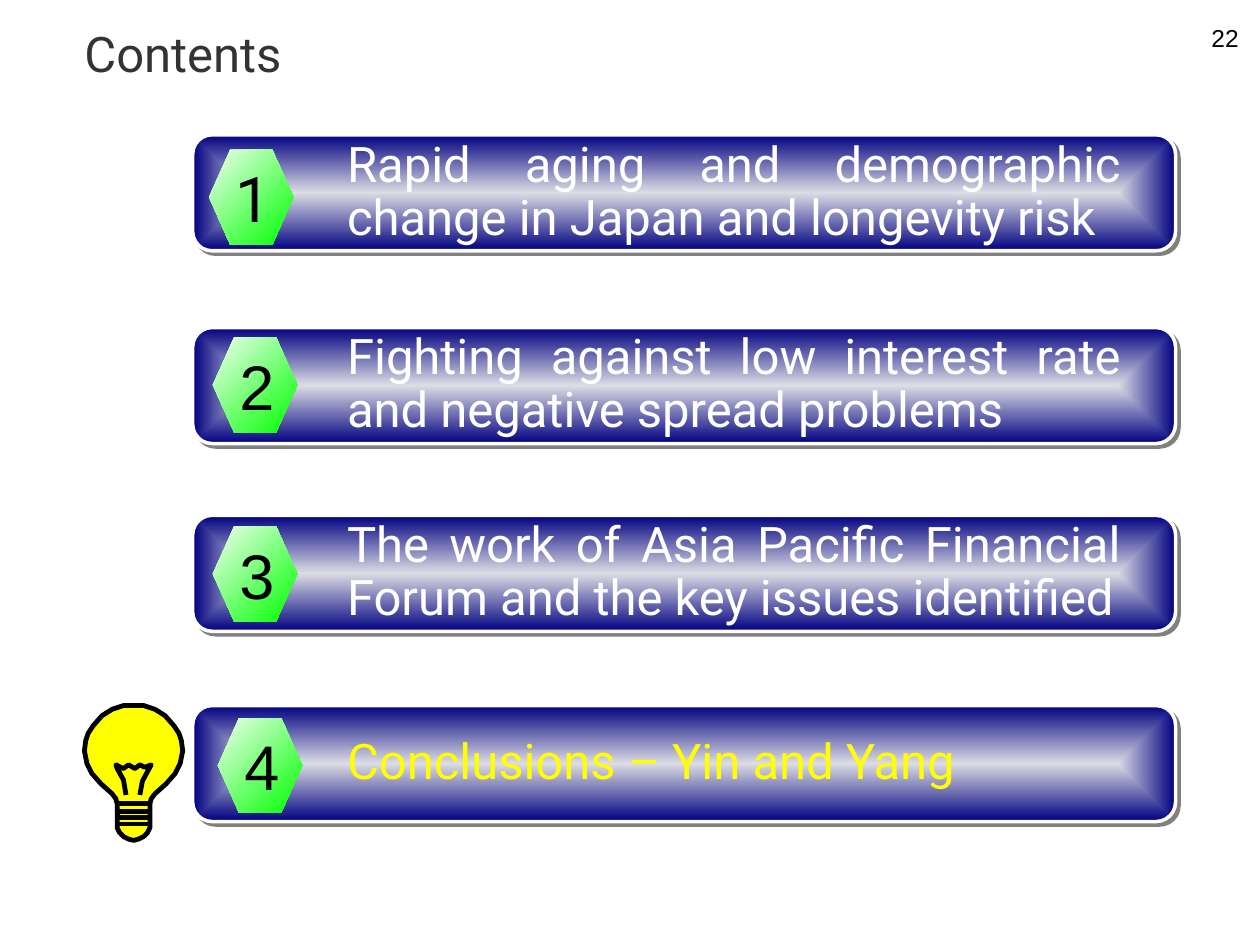
import dataclasses
import pptx
import pptx.dml.color
import pptx.enum.shapes
import pptx.enum.text
import pptx.oxml
import pptx.oxml.ns
import pptx.util

CELL = pptx.util.Inches(0.1)  # the slide is a grid of 100 columns by 75 rows
HUNDREDTH = CELL / 10
SHAPE = pptx.enum.shapes.MSO_SHAPE
ALIGN = pptx.enum.text.PP_ALIGN
ANCHOR = pptx.enum.text.MSO_ANCHOR
NS = pptx.oxml.ns.nsdecls("a")

BAR_LEFT, BAR_WIDTH, BAR_HEIGHT = 15.3, 78, 9.2
BADGE_WIDTH, BADGE_HEIGHT = 6.7, 7.5
BAR_FRAME = dict(vertical_anchor=ANCHOR.MIDDLE, word_wrap=True,
                 margin_left=11.8 * CELL, margin_right=3.9 * CELL)
BADGE_FRAME = dict(vertical_anchor=ANCHOR.MIDDLE, word_wrap=False)
TOP_FRAME = dict(vertical_anchor=ANCHOR.TOP, word_wrap=True,
                 auto_size=pptx.enum.text.MSO_AUTO_SIZE.NONE)

# Bulb points: hundredths of an inch from the middle of the bulb's top
BULB_TOP = (10.6, 56)
BULB_HALF = [(0, 107), (4, 106), (8, 104), (11, 101), (13, 97), (13, 78), (14, 74),
             (17, 70), (26, 62), (33, 54), (37, 46), (39, 36), (38, 28), (36, 22),
             (32, 16), (25, 8), (17, 3), (8, 0), (0, 0)]
BULB = BULB_HALF + [(-x, y) for x, y in BULB_HALF[-2:0:-1]]
FILAMENT = [(-6, 71), (-8, 59), (-13, 50), (-14, 47), (-8, 50), (-4, 47), (1, 50),
            (5, 47), (9, 49), (14, 47), (7, 60), (5, 71)]
SCREW = [(-13, 78), (13, 78), (13, 84), (-13, 84), (-13, 89), (13, 89), (13, 94), (-13, 94)]


@dataclasses.dataclass
class Item:
    number: str
    text: str
    row: float
    badge_col: float
    badge_row: float
    color: str = "FFFFFF"
    number_font: str = "Arial"


ITEMS = [
    Item("1", "Rapid aging and demographic change in Japan and longevity risk",
         10.7, 16.6, 11.9, number_font="Roboto"),
    Item("2", "Fighting against low interest rate and negative spread problems",
         26, 16.9, 26.8),
    Item("3", "The work of Asia Pacific Financial Forum and the key issues identified",
         40.9, 16.9, 41.8),
    Item("4", "Conclusions – Yin and Yang", 56, 17.3, 57, color="FFFF00"),
]


def rgb(color: str):
    return pptx.dml.color.RGBColor.from_string(color)


def cells(*values: float) -> list:
    return [pptx.util.Emu(round(v * CELL)) for v in values]


def write(s, text: str, size: float, font: str, color: str, align, frame: dict, spacing=None):
    tf = s.text_frame
    for name, value in frame.items():
        setattr(tf, name, round(value) if name.startswith("margin") else value)
    p = tf.paragraphs[0]
    p.alignment, p.line_spacing = align, spacing
    r = p.add_run()
    r.text = text
    for name, value in dict(size=pptx.util.Pt(size), name=font).items():
        setattr(r.font, name, value)
    r.font.color.rgb = rgb(color)
    return r


def shadow_xml(color: str) -> str:
    return (f'<a:outerShdw {NS} dist="35921" dir="2700000" algn="ctr" rotWithShape="0">'
            f'<a:srgbClr val="{color}"/></a:outerShdw>')


def add_gradient(s, start: str, end: str, from_center: bool):
    s.fill.gradient()
    for stop, color, position in zip(s.fill.gradient_stops, (start, end), (0, 1)):
        stop.color.rgb = rgb(color)
        stop.position = position
    s.fill.gradient_angle = 315
    if from_center:
        lin = s._element.spPr.find(".//" + pptx.oxml.ns.qn("a:lin"))
        lin.getparent().replace(lin, pptx.oxml.parse_xml(
            f'<a:path {NS} path="shape">'
            '<a:fillToRect l="50000" t="50000" r="50000" b="50000"/></a:path>'))


def add_item(slide, item: Item):
    bar = slide.shapes.add_shape(SHAPE.ROUNDED_RECTANGLE,
                                 *cells(BAR_LEFT, item.row, BAR_WIDTH, BAR_HEIGHT))
    add_gradient(bar, "DCDCE4", "000080", True)
    bar.line.color.rgb = rgb("FFFFFF")
    bar.line.width = pptx.util.Pt(2)
    bar.shadow.inherit = False
    effects = bar._element.spPr.find(pptx.oxml.ns.qn("a:effectLst"))
    effects.append(pptx.oxml.parse_xml(shadow_xml("808080")))
    write(bar, item.text, 28, "Roboto", item.color, ALIGN.JUSTIFY, BAR_FRAME, 0.9)

    badge = slide.shapes.add_shape(
        SHAPE.HEXAGON, *cells(item.badge_col, item.badge_row, BADGE_WIDTH, BADGE_HEIGHT))
    badge.adjustments[0] = 0.25
    add_gradient(badge, "F1FFF1", "00FF00", False)
    badge.line.fill.background()
    badge.shadow.inherit = False
    write(badge, item.number, 36, item.number_font, "000000", ALIGN.LEFT, BADGE_FRAME)


def add_drawing(slide, strokes: list, closed: bool):
    """Draw black strokes of the bulb; a closed one is filled yellow."""
    builder = slide.shapes.build_freeform(*strokes[0][0], scale=HUNDREDTH)
    for i, stroke in enumerate(strokes):
        if i:
            builder.move_to(*stroke[0])
        builder.add_line_segments(stroke[1:], close=closed)
    s = builder.convert_to_shape(*cells(*BULB_TOP))
    if closed:
        s.fill.solid()
        s.fill.fore_color.rgb = rgb("FFFF00")
    else:
        s.fill.background()
    s.line.color.rgb = rgb("000000")
    s.line.width = pptx.util.Pt(2.75)
    s.shadow.inherit = False


def main():
    prs = pptx.Presentation()
    prs.slide_width, prs.slide_height = cells(100, 75)
    slide = prs.slides.add_slide(prs.slide_layouts[5])

    title = slide.shapes.title
    title.left, title.top, title.width, title.height = cells(5.7, 1.4, 55.5, 5.6)
    r = write(title, "Contents", 28, "Roboto", "333333", ALIGN.LEFT, TOP_FRAME)
    fill = r.font._element.find(pptx.oxml.ns.qn("a:solidFill"))
    fill.addnext(pptx.oxml.parse_xml(
        f'<a:effectLst {NS}>{shadow_xml("C0C0C0")}</a:effectLst>'))

    number = slide.shapes.add_textbox(*cells(76, 1.3, 23.3, 5.2))
    write(number, "22", 14, "Arial", "000000", ALIGN.RIGHT, TOP_FRAME)

    for item in ITEMS:
        add_item(slide, item)
    add_drawing(slide, [BULB], closed=True)
    add_drawing(slide, [FILAMENT, SCREW], closed=False)
    prs.save("out.pptx")


if __name__ == "__main__":
    main()
